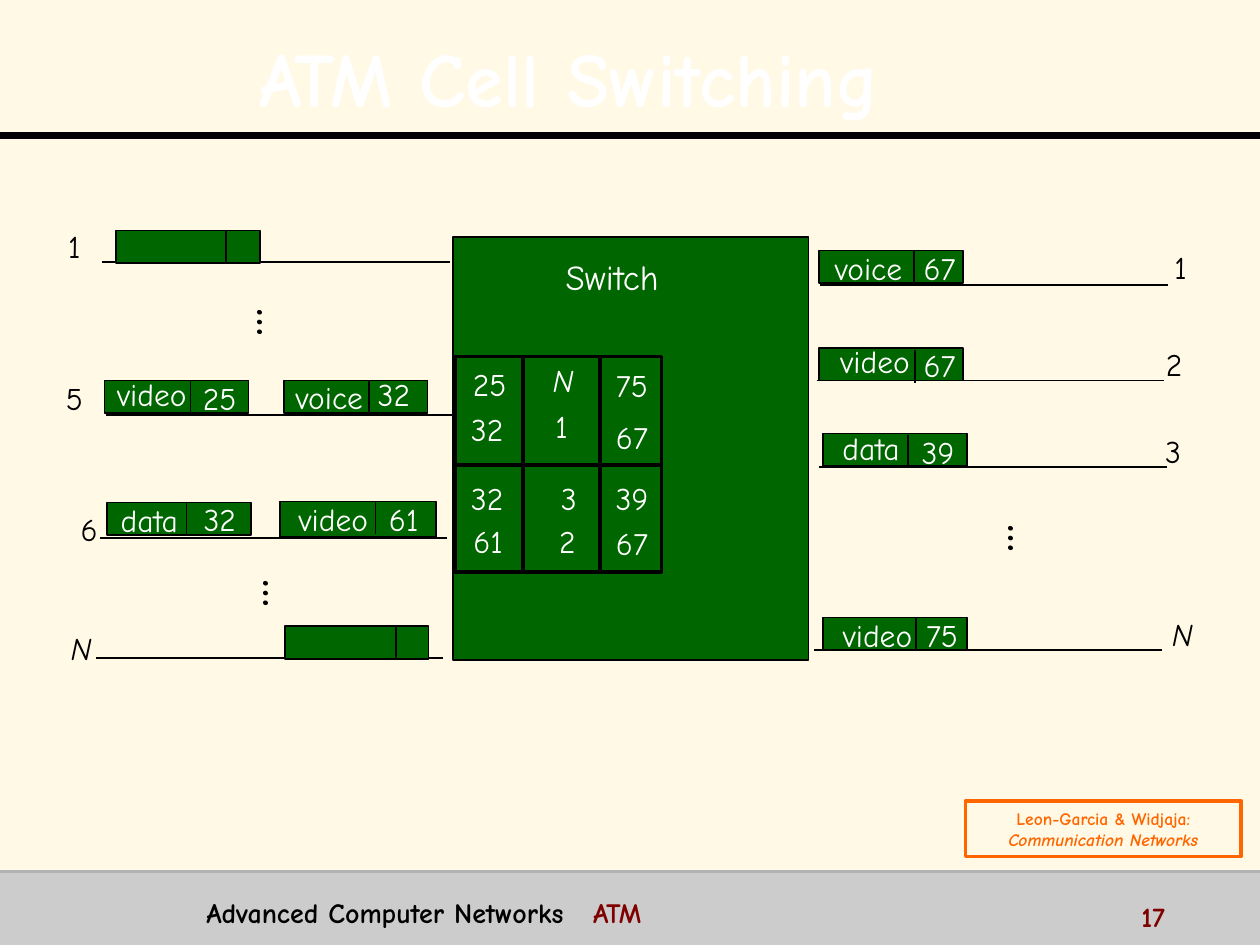
from lxml.etree import SubElement
from pptx import Presentation
from pptx.dml.color import RGBColor
from pptx.enum.shapes import MSO_CONNECTOR as Connector, MSO_SHAPE as Shape
from pptx.enum.text import MSO_ANCHOR as Anchor, MSO_AUTO_SIZE as AutoSize, PP_ALIGN as Align
from pptx.oxml.ns import qn
from pptx.util import Cm, Pt

FONT = "Comic Neue"
GREEN, BLACK, WHITE = "006600", "000000", "FFFFFF"
ORANGE, MAROON = "FF6600", "800000"
color = RGBColor.from_string


def add_line(x1, y1, x2, y2, width=1, ink=BLACK):
    line = slide.shapes.add_connector(Connector.STRAIGHT, Cm(x1), Cm(y1), Cm(x2), Cm(y2))
    line.line.color.rgb = color(ink)
    line.line.width = Pt(width)
    SubElement(line._element.spPr, qn("a:effectLst"))


def add_label(text, center, top, ink=BLACK, size=18, width=2, height=1.02):
    label = slide.shapes.add_textbox(Cm(center - width / 2), Cm(top), Cm(width), Cm(height))
    label.text_frame.word_wrap = False
    paragraph = label.text_frame.paragraphs[0]
    paragraph.alignment = Align.CENTER
    run = paragraph.add_run()
    run.text = text
    run.font.name = FONT
    run.font.size = Pt(size)
    run.font.italic = text == "N"
    run.font.color.rgb = color(ink)
    return label


prs = Presentation()
prs.slide_width, prs.slide_height = Cm(25.4), Cm(19.05)
slide = prs.slides.add_slide(prs.slide_layouts[5])
slide.background.fill.solid()
slide.background.fill.fore_color.rgb = color("FFF9E6")

footer_band = slide.shapes.add_shape(Shape.RECTANGLE, 0, Cm(17.57), Cm(25.4), Cm(1.48))
footer_band.shadow.inherit = False
footer_band.fill.solid()
footer_band.fill.fore_color.rgb = color("CCCCCC")
footer_band.line.fill.background()
add_line(0, 2.74, 25.4, 2.74, 4)
add_line(0, 17.57, 25.4, 17.57, 2, "B2B2B2")

title = slide.shapes.title
title.left, title.top, title.width, title.height = Cm(0.5), Cm(0), Cm(21.95), Cm(2.92)
title.text_frame.vertical_anchor = Anchor.MIDDLE
title.text_frame.auto_size = AutoSize.NONE
heading = title.text_frame.paragraphs[0]
heading.alignment = Align.CENTER
heading.line_spacing = 1.1
run = heading.add_run()
run.text = "ATM Cell Switching"
run.font.size = Pt(44)
run.font.bold = True
run.font.color.rgb = color(WHITE)
effects = SubElement(run.font._element, qn("a:effectLst"))
shadow = SubElement(effects, qn("a:outerShdw"), dist="35921", dir="2700000")
SubElement(shadow, qn("a:srgbClr"), val=BLACK)
run.font.name = FONT

switch = slide.shapes.add_shape(Shape.RECTANGLE, Cm(9.14), Cm(4.78), Cm(7.16), Cm(8.53))
switch.shadow.inherit = False
switch.fill.solid()
switch.fill.fore_color.rgb = color(GREEN)
switch.line.color.rgb = color(BLACK)
switch.line.width = Pt(1)
add_label("Switch", 12.34, 5.03, WHITE, 20, 2.8, 1.09)

ports = [
    ("1", 1.5, 4.45, 2.06, 5.28),
    ("5", 1.5, 7.52, 2.13, 8.36),
    ("6", 1.8, 10.16, 2.01, 10.85),
    ("N", 1.6, 12.55, 1.93, 13.26),
    ("1", 23.8, 4.88, 16.54, 5.74),
    ("2", 23.67, 6.83, 16.46, 7.67),
    ("3", 23.65, 8.59, 16.51, 9.42),
    ("N", 23.8, 12.27, 16.41, 13.11),
]
for port, center, top, link_left, link_y in ports:
    add_line(link_left, link_y, link_left + 7.01, link_y)
    add_label(port, center, top, width=0.85)

cells = [
    (2.34, 4.65, 2.9, 0.66, 4.55, 4.65, []),
    (2.11, 7.67, 2.9, 0.66, 3.84, 7.67, [("video", 3.06, 7.44), ("25", 4.43, 7.52)]),
    (5.72, 7.67, 2.9, 0.66, 7.44, 7.67, [("voice", 6.64, 7.49), ("32", 7.94, 7.44)]),
    (2.16, 10.13, 2.9, 0.66, 3.76, 10.11, [("data", 3.01, 9.98), ("32", 4.43, 9.96)]),
    (5.64, 10.11, 3.15, 0.71, 7.57, 10.11, [("video", 6.72, 9.96), ("61", 8.14, 9.96)]),
    (5.74, 12.62, 2.9, 0.66, 7.98, 12.62, []),
    (16.51, 5.05, 2.9, 0.66, 18.42, 5.03, [("voice", 17.51, 4.9), ("67", 18.94, 4.9)]),
    (16.51, 7.01, 2.9, 0.66, 18.44, 7.06, [("video", 17.64, 6.78), ("67", 18.94, 6.86)]),
    (16.59, 8.74, 2.9, 0.66, 18.31, 8.76, [("data", 17.56, 8.53), ("39", 18.91, 8.61)]),
    (16.59, 12.45, 2.9, 0.66, 18.47, 12.45, [("video", 17.69, 12.29), ("75", 18.99, 12.29)]),
]
for left, top, width, height, divider, divider_top, fields in cells:
    cell = slide.shapes.add_shape(Shape.RECTANGLE, Cm(left), Cm(top), Cm(width), Cm(height))
    cell.shadow.inherit = False
    cell.fill.solid()
    cell.fill.fore_color.rgb = color(GREEN)
    cell.line.color.rgb = color(BLACK)
    cell.line.width = Pt(1)
    add_line(divider, divider_top, divider, divider_top + 0.66)
    for field, center, field_top in fields:
        add_label(field, center, field_top, WHITE, width=1.3 if field.isdigit() else 2)

for top, height in [(7.19, 2.18), (9.37, 2.16)]:
    routes = slide.shapes.add_shape(Shape.RECTANGLE, Cm(9.17), Cm(top), Cm(4.17), Cm(height))
    routes.shadow.inherit = False
    routes.fill.background()
    routes.line.color.rgb = color(BLACK)
    routes.line.width = Pt(2)
for divider in (10.54, 12.09):
    add_line(divider, 7.19, divider, 11.53, 2)

route_columns = [
    [("25", 9.87, 7.24), ("32", 9.82, 8.15), ("32", 9.82, 9.53), ("61", 9.84, 10.39)],
    [("N", 11.35, 7.16), ("1", 11.32, 8.08), ("3", 11.47, 9.53), ("2", 11.44, 10.39)],
    [("75", 12.74, 7.26), ("67", 12.74, 8.31), ("39", 12.74, 9.53), ("67", 12.74, 10.44)],
]
for column in route_columns:
    for entry, center, top in column:
        add_label(entry, center, top, WHITE, width=1.3)

for center, top in [(5.07, 6.02), (5.19, 11.48), (20.21, 10.36)]:
    ellipsis = add_label("…", center, top, size=24, width=1.35, height=0.97)
    ellipsis.rotation = 270
    ellipsis.text_frame.paragraphs[0].line_spacing = 0.7
    ellipsis.text_frame.paragraphs[0].runs[0].font.bold = True

citation = slide.shapes.add_shape(Shape.RECTANGLE, Cm(19.46), Cm(16.15), Cm(5.56), Cm(1.12))
citation.shadow.inherit = False
citation.fill.background()
citation.line.color.rgb = color(ORANGE)
citation.line.width = Pt(2)
citation.text_frame.vertical_anchor = Anchor.MIDDLE
source = citation.text_frame.paragraphs[0]
book = citation.text_frame.add_paragraph()
for paragraph, text in [(source, "Leon-Garcia & Widjaja:"), (book, "Communication Networks")]:
    paragraph.alignment = Align.CENTER
    run = paragraph.add_run()
    run.text = text
    run.font.name = FONT
    run.font.size = Pt(10)
    run.font.bold = True
    run.font.italic = paragraph is book
    run.font.color.rgb = color(ORANGE)

footers = [
    (3.91, 17.93, 18.49, 0.79, [("Advanced Computer Networks\t", BLACK), ("ATM", MAROON)]),
    (22.76, 18.01, 2.54, 0.64, [("17", MAROON)]),
]
for left, top, width, height, parts in footers:
    footer = slide.shapes.add_textbox(Cm(left), Cm(top), Cm(width), Cm(height))
    footer.text_frame.word_wrap = True
    paragraph = footer.text_frame.paragraphs[0]
    if len(parts) > 1:
        tabs = SubElement(paragraph._p.get_or_add_pPr(), qn("a:tabLst"))
        SubElement(tabs, qn("a:tab"), pos=str(Cm(7.8)), algn="l")
    for text, ink in parts:
        run = paragraph.add_run()
        run.text = text
        run.font.name = FONT
        run.font.size = Pt(16)
        run.font.bold = True
        run.font.color.rgb = color(ink)

prs.save("out.pptx")
